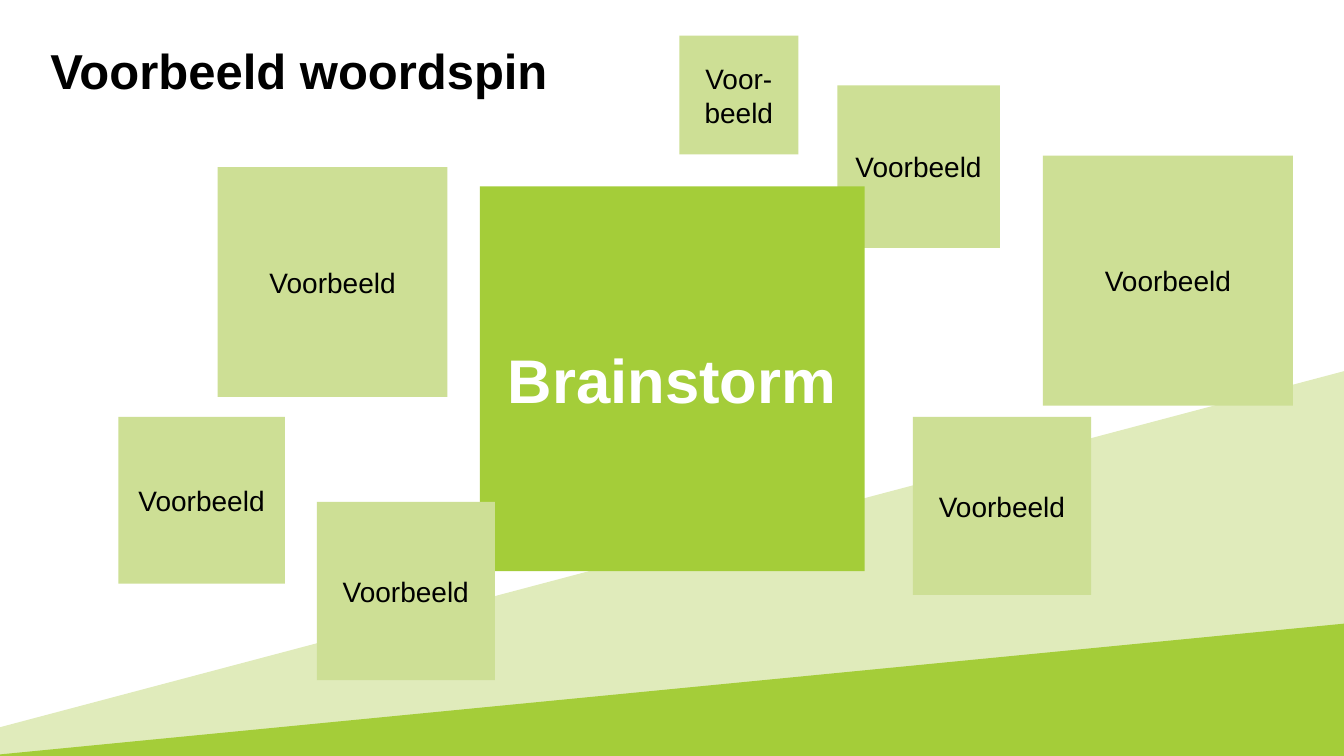
from dataclasses import dataclass

import pptx
import pptx.dml.color
import pptx.enum.shapes
import pptx.enum.text
import pptx.util


@dataclass(frozen=True)
class Theme:
    font: str = "Arial"
    black: str = "000000"
    white: str = "FFFFFF"
    green: str = "A4CD39"
    soft_green: str = "CDDF95"
    pale_green: str = "E0EBBB"
    title_size: int = 35
    centre_size: int = 44
    word_size: int = 20
    word_spacing: int = 24


THEME = Theme()
WIDTH = pptx.util.Inches(13.333)
HEIGHT = pptx.util.Inches(7.5)

# Corner points in percent of the slide's width and height
BANDS = [
    (THEME.pale_green, [(100, 49.1), (100, 100), (0, 100), (0, 96.2)]),
    (THEME.green, [(0, 99.8), (0, 100), (100, 100), (100, 82.5)]),
]

# Text, left (% of width), top (% of height), side (% of width)
WORDS_BEHIND = [
    ("Voorbeeld", 62.3, 11.3, 12.1),
    ("Voor-beeld", 50.55, 4.7, 8.85),
]
CENTRE = ("Brainstorm", 35.7, 24.65, 28.63)
WORDS_IN_FRONT = [
    ("Voorbeeld", 77.6, 20.6, 18.6),
    ("Voorbeeld", 67.93, 55.15, 13.25),
    ("Voorbeeld", 16.2, 22.1, 17.1),
    ("Voorbeeld", 8.8, 55.15, 12.4),
    ("Voorbeeld", 23.57, 66.4, 13.25),
]


def across(percent):
    return round(WIDTH * percent / 100)


def down(percent):
    return round(HEIGHT * percent / 100)


def paint(shape, colour):
    shape.shadow.inherit = False
    shape.fill.solid()
    shape.fill.fore_color.rgb = pptx.dml.color.RGBColor.from_string(colour)
    shape.line.fill.background()


def write(shape, text, size, colour, alignment, bold=False, spacing=None):
    frame = shape.text_frame
    frame.text = text
    frame.word_wrap = True
    frame.vertical_anchor = pptx.enum.text.MSO_ANCHOR.MIDDLE
    paragraph = frame.paragraphs[0]
    paragraph.alignment = alignment
    paragraph.line_spacing = spacing
    font = paragraph.runs[0].font
    font.name = THEME.font
    font.size = pptx.util.Pt(size)
    font.bold = bold
    font.color.rgb = pptx.dml.color.RGBColor.from_string(colour)


def add_title(slide, text):
    title = slide.shapes.title
    title.left, title.top = across(3), down(5.2)
    title.width, title.height = across(46.4), down(9.2)
    write(title, text, THEME.title_size, THEME.black,
          pptx.enum.text.PP_ALIGN.LEFT, bold=True, spacing=0.9)
    title.text_frame.auto_size = pptx.enum.text.MSO_AUTO_SIZE.NONE


def add_band(slide, colour, corners):
    points = [(across(x), down(y)) for x, y in corners]
    builder = slide.shapes.build_freeform(*points[0])
    builder.add_line_segments(points[1:], close=True)
    band = builder.convert_to_shape()
    paint(band, colour)
    slide.shapes.title.element.addprevious(band.element)


def add_square(slide, left, top, side, colour):
    square = slide.shapes.add_shape(
        pptx.enum.shapes.MSO_SHAPE.RECTANGLE,
        across(left), down(top), across(side), across(side))
    paint(square, colour)
    return square


def add_word(slide, text, left, top, side):
    square = add_square(slide, left, top, side, THEME.soft_green)
    write(square, text, THEME.word_size, THEME.black,
          pptx.enum.text.PP_ALIGN.CENTER,
          spacing=pptx.util.Pt(THEME.word_spacing))


def add_centre(slide, text, left, top, side):
    square = add_square(slide, left, top, side, THEME.green)
    write(square, text, THEME.centre_size, THEME.white,
          pptx.enum.text.PP_ALIGN.CENTER, bold=True)


def main():
    presentation = pptx.Presentation()
    presentation.slide_width = WIDTH
    presentation.slide_height = HEIGHT
    slide = presentation.slides.add_slide(presentation.slide_layouts[5])

    # Background bands and title
    for colour, corners in BANDS:
        add_band(slide, colour, corners)
    add_title(slide, "Voorbeeld woordspin")

    # Word web, from back to front
    for word in WORDS_BEHIND:
        add_word(slide, *word)
    add_centre(slide, *CENTRE)
    for word in WORDS_IN_FRONT:
        add_word(slide, *word)

    presentation.save("out.pptx")


if __name__ == "__main__":
    main()
